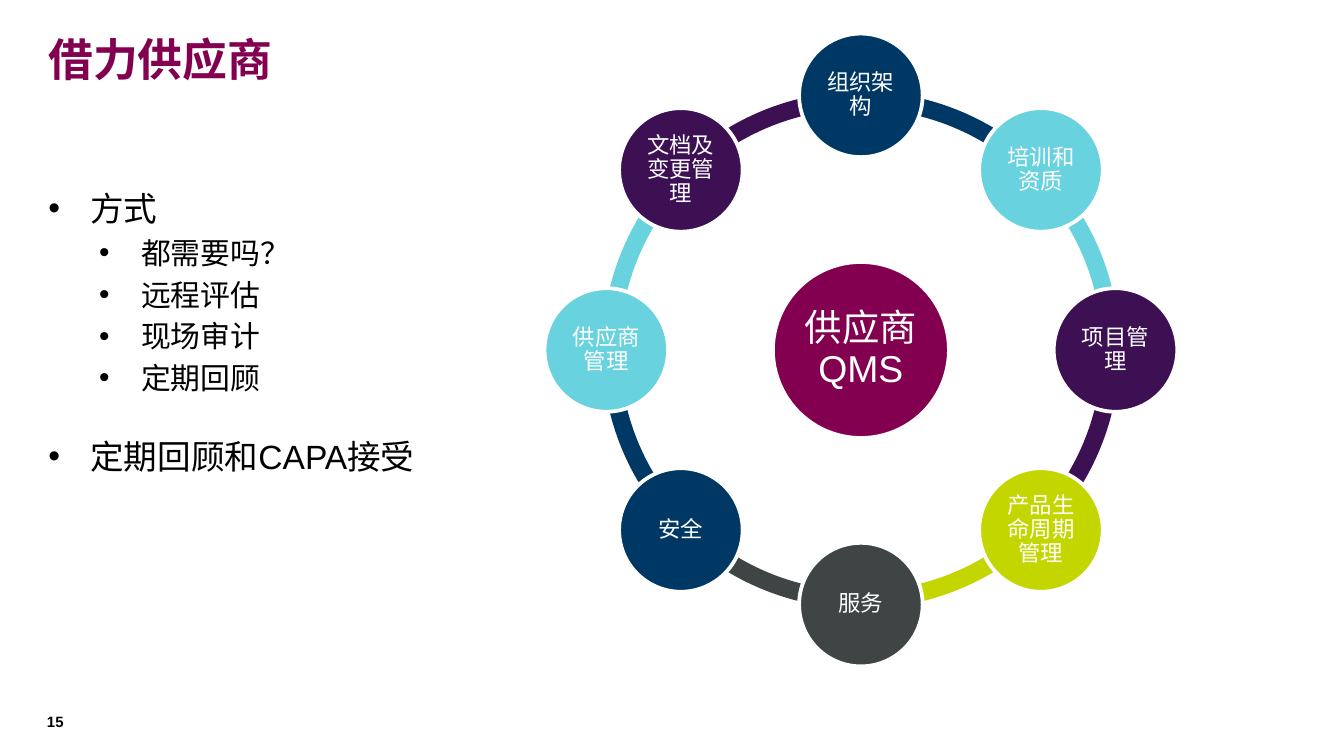
"""Build the supplier slide: an outline beside a ring of quality system topics."""
from dataclasses import dataclass
from math import cos, radians, sin

from lxml.etree import SubElement
from pptx import Presentation
from pptx.dml.color import RGBColor
from pptx.enum.shapes import MSO_SHAPE
from pptx.enum.text import MSO_ANCHOR, MSO_AUTO_SIZE, PP_ALIGN
from pptx.oxml.ns import qn
from pptx.shapes.autoshape import Shape
from pptx.slide import Slide
from pptx.text.text import TextFrame, _Paragraph
from pptx.util import Pt


@dataclass(frozen=True)
class Theme:
    font: str = "Arial"
    plum: str = "830051"
    navy: str = "003865"
    aqua: str = "68D2DF"
    purple: str = "3C1053"
    lime: str = "C4D600"
    gray: str = "3F4444"
    white: str = "FFFFFF"
    black: str = "000000"
    title_size: float = 24
    hub_size: float = 20
    item_size: float = 18
    subitem_size: float = 16
    topic_size: float = 12
    number_size: float = 8


@dataclass(frozen=True)
class Topic:
    text: str
    color: str


@dataclass(frozen=True)
class Item:
    text: str
    level: int = 0
    before: float = 0


@dataclass(frozen=True)
class Ring:
    center_x: float = 461.2
    center_y: float = 187.5
    radius: float = 136.4
    arc_diameter: float = 277.2
    arc_thickness: float = 0.034
    topic_diameter: float = 66.2
    hub_diameter: float = 94.3


THEME = Theme()
RING = Ring()
TOPICS = [
    Topic("组织架构", THEME.navy),
    Topic("培训和资质", THEME.aqua),
    Topic("项目管理", THEME.purple),
    Topic("产品生命周期管理", THEME.lime),
    Topic("服务", THEME.gray),
    Topic("安全", THEME.navy),
    Topic("供应商管理", THEME.aqua),
    Topic("文档及变更管理", THEME.purple),
]
ITEMS = [
    Item("方式"),
    Item("都需要吗？", 1, 3.2),
    Item("远程评估", 1, 3.2),
    Item("现场审计", 1, 3.2),
    Item("定期回顾", 1, 3.2),
    Item("定期回顾和CAPA接受", before=21.5),
]


def write_text(para: _Paragraph, text: str, *, size: float, color: str,
               bold: bool = False, align: PP_ALIGN = PP_ALIGN.LEFT,
               spacing: float = 1.0, before: float = 0) -> None:
    para.alignment = align
    para.line_spacing = spacing
    para.space_before = Pt(before)
    span = para.add_run()
    span.text = text
    span.font.name = THEME.font
    span.font.size = Pt(size)
    span.font.bold = bold
    span.font.color.rgb = RGBColor.from_string(color)


def set_frame(frame: TextFrame, anchor: MSO_ANCHOR, inset: float) -> None:
    frame.word_wrap = True
    frame.auto_size = MSO_AUTO_SIZE.NONE
    frame.vertical_anchor = anchor
    frame.margin_left = frame.margin_right = Pt(inset)
    frame.margin_top = frame.margin_bottom = Pt(inset)


def place(box: Shape, left: float, top: float, width: float, height: float) -> None:
    box.left, box.top, box.width, box.height = Pt(left), Pt(top), Pt(width), Pt(height)


def add_round(page: Slide, kind: MSO_SHAPE, x: float, y: float,
              diameter: float, color: str) -> Shape:
    shape = page.shapes.add_shape(kind, Pt(x - diameter / 2), Pt(y - diameter / 2),
                                  Pt(diameter), Pt(diameter))
    shape.shadow.inherit = False
    shape.fill.solid()
    shape.fill.fore_color.rgb = RGBColor.from_string(color)
    shape.line.fill.background()
    return shape


def add_arc(page: Slide, start: float, sweep: float, color: str) -> None:
    arc = add_round(page, MSO_SHAPE.BLOCK_ARC, RING.center_x, RING.center_y,
                    RING.arc_diameter, color)
    for index, angle in enumerate((start, start + sweep)):
        arc.adjustments[index] = angle % 360 * 0.6
    arc.adjustments[2] = RING.arc_thickness


def add_circle(page: Slide, x: float, y: float, diameter: float,
               topic: Topic, size: float) -> None:
    circle = add_round(page, MSO_SHAPE.OVAL, x, y, diameter, topic.color)
    circle.line.color.rgb = RGBColor.from_string(THEME.white)
    circle.line.width = Pt(2)
    set_frame(circle.text_frame, MSO_ANCHOR.MIDDLE, size / 10)
    write_text(circle.text_frame.paragraphs[0], topic.text, size=size,
               color=THEME.white, align=PP_ALIGN.CENTER, spacing=0.9)


def add_ring(page: Slide) -> None:
    step = 360 / len(TOPICS)
    angles = [270 + step * index for index in range(len(TOPICS))]
    for angle, topic in zip(angles, TOPICS):
        add_arc(page, angle, step, topic.color)
    add_circle(page, RING.center_x, RING.center_y, RING.hub_diameter,
               Topic("供应商QMS", THEME.plum), THEME.hub_size)
    for angle, topic in zip(angles, TOPICS):
        x = RING.center_x + RING.radius * cos(radians(angle))
        y = RING.center_y + RING.radius * sin(radians(angle))
        add_circle(page, x, y, RING.topic_diameter, topic, THEME.topic_size)


def add_list(page: Slide) -> None:
    box = page.placeholders[1]
    place(box, 18.7, 97.2, 321.8, 284.4)
    frame = box.text_frame
    frame.auto_size = MSO_AUTO_SIZE.NONE
    for index, item in enumerate(ITEMS):
        para = frame.add_paragraph() if index else frame.paragraphs[0]
        para.level = item.level
        size = THEME.subitem_size if item.level else THEME.item_size
        write_text(para, item.text, size=size, color=THEME.black, before=item.before)
        properties = para._p.get_or_add_pPr()
        properties.set("marL", str(Pt(49.7 if item.level else 22.5)))
        properties.set("indent", str(-Pt(22.5)))
        SubElement(properties, qn("a:buChar"), char="•")


def add_title(page: Slide) -> None:
    box = page.shapes.title
    place(box, 18.7, 11.5, 690.5, 39.6)
    box.text_frame.auto_size = MSO_AUTO_SIZE.NONE
    write_text(box.text_frame.paragraphs[0], "借力供应商",
               size=THEME.title_size, color=THEME.plum, bold=True)


def add_number(page: Slide) -> None:
    box = page.shapes.add_textbox(Pt(25.2), Pt(381.6), Pt(31), Pt(13))
    set_frame(box.text_frame, MSO_ANCHOR.TOP, 0)
    write_text(box.text_frame.paragraphs[0], "15",
               size=THEME.number_size, color=THEME.black, bold=True)


def main() -> None:
    deck = Presentation()
    deck.slide_width, deck.slide_height = Pt(720), Pt(405)
    page = deck.slides.add_slide(deck.slide_layouts[1])
    add_title(page)
    add_list(page)
    add_number(page)
    add_ring(page)
    deck.save("out.pptx")


if __name__ == "__main__":
    main()
